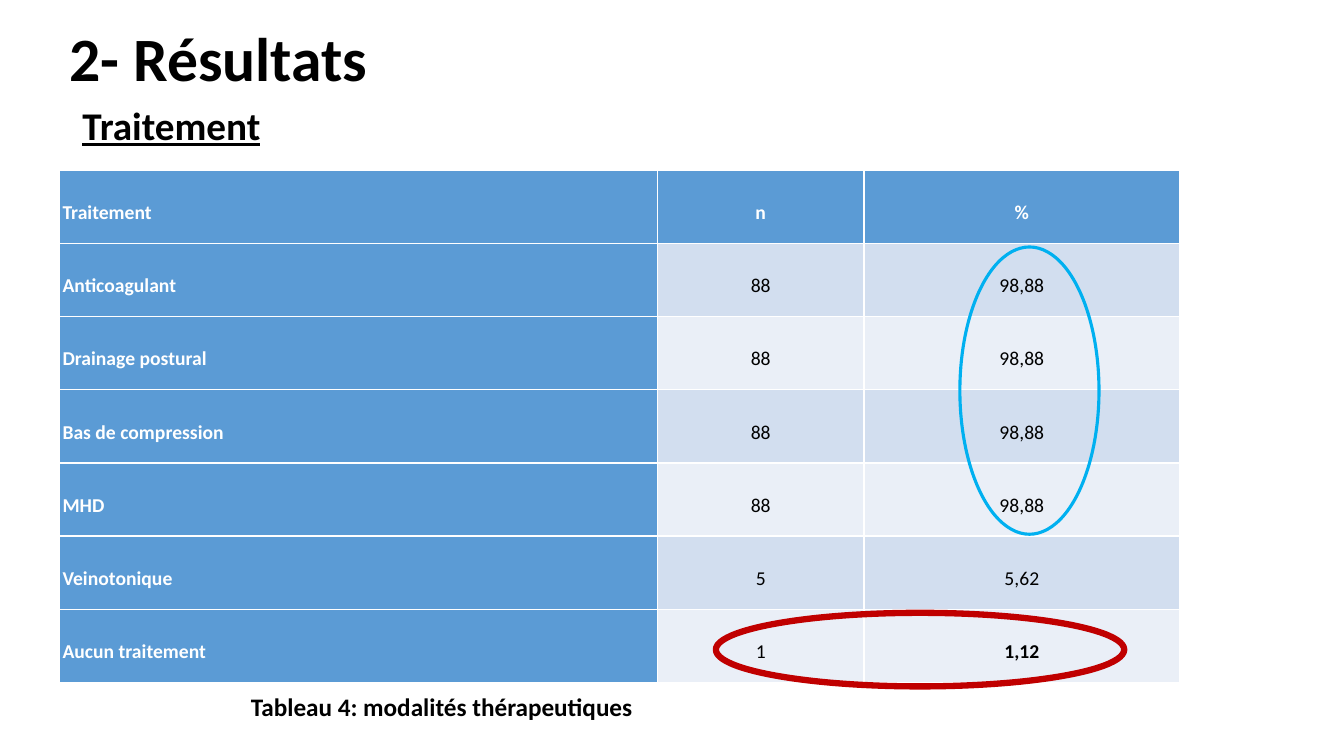
"""Build the slide on treatment results: a table with two ringed areas."""
from pptx import Presentation
from pptx.dml.color import RGBColor
from pptx.enum.shapes import MSO_SHAPE
from pptx.enum.text import MSO_ANCHOR, PP_ALIGN

PX = 9144
LEFT, CENTER = PP_ALIGN.LEFT, PP_ALIGN.CENTER
MIDDLE = MSO_ANCHOR.MIDDLE
OVAL = MSO_SHAPE.OVAL
WHITE, BLACK, BLUE = "FFFFFF", "000000", "5B9BD5"
BANDS = ["EAEFF7", "D2DEEF"]


def rgb(code):
    return RGBColor.from_string(code)


def write(frame, text, size, color=BLACK, bold=True, align=LEFT, space=1.0):
    frame.text = text
    para = frame.paragraphs[0]
    para.alignment = align
    para.line_spacing = space
    font = para.font
    font.name = "Calibri"
    font.size = size * 12700
    font.bold = bold
    font.color.rgb = rgb(color)
    return font


deck = Presentation()
deck.slide_width, deck.slide_height = 1333 * PX, 750 * PX
slide = deck.slides.add_slide(deck.slide_layouts[5])
shapes = slide.shapes

title = shapes.title
title.left, title.top = 59 * PX, 0
title.width, title.height = 1176 * PX, 123 * PX
title.text_frame.vertical_anchor = MIDDLE
write(title.text_frame, "2- Résultats", 44, space=0.9)

head = shapes.add_textbox(72 * PX, 101 * PX, 1150 * PX, 60 * PX).text_frame
head.word_wrap = True
write(head, "Traitement", 28, space=0.9).underline = True

rows = [
    ("Traitement", "n", "%"),
    ("Anticoagulant", "88", "98,88"),
    ("Drainage postural", "88", "98,88"),
    ("Bas de compression", "88", "98,88"),
    ("MHD", "88", "98,88"),
    ("Veinotonique", "5", "5,62"),
    ("Aucun traitement", "1", "1,12"),
]
grid = shapes.add_table(len(rows), 3, 59 * PX, 169 * PX, 1111 * PX, 508 * PX).table
grid.first_col = True
for col, width in zip(grid.columns, (593, 205, 313)):
    col.width = width * PX
for r, row in enumerate(rows):
    for c, text in enumerate(row):
        cell = grid.cell(r, c)
        label = r == 0 or c == 0
        cell.fill.solid()
        cell.fill.fore_color.rgb = rgb(BLUE if label else BANDS[r % 2])
        cell.vertical_anchor = MIDDLE
        cell.margin_left = cell.margin_right = 3 * PX
        cell.margin_top = cell.margin_bottom = 2 * PX
        write(cell.text_frame, text, 14, WHITE if label else BLACK,
              label or text == "1,12", CENTER if c else LEFT, 1.5)

note = shapes.add_textbox(239 * PX, 681 * PX, 664 * PX, 40 * PX).text_frame
note.word_wrap = True
write(note, "Tableau 4: modalités thérapeutiques", 18)

rings = [
    (710, 608, 405, 73, "C00000", 4.5),
    (952, 245, 138, 285, "00B0F0", 2.25),
]
for x, y, w, h, color, weight in rings:
    ring = shapes.add_shape(OVAL, x * PX, y * PX, w * PX, h * PX)
    ring.shadow.inherit = False
    ring.fill.background()
    ring.line.color.rgb = rgb(color)
    ring.line.width = int(weight * 12700)

deck.save("out.pptx")
